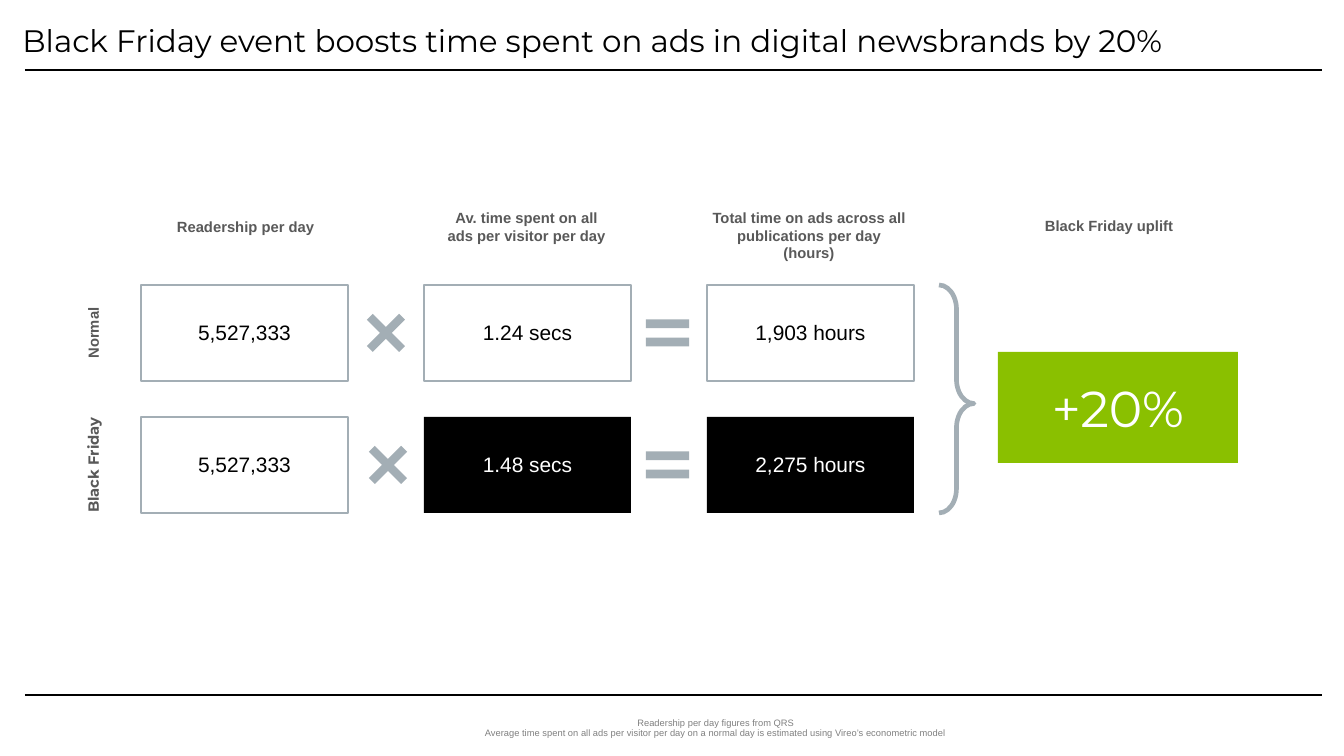
from pptx import Presentation
from pptx.dml.color import RGBColor
from pptx.enum.shapes import MSO_CONNECTOR, MSO_SHAPE
from pptx.enum.text import MSO_ANCHOR, MSO_AUTO_SIZE, PP_ALIGN
from pptx.oxml.ns import qn
from pptx.util import Emu, Pt
from lxml import etree

TOP, MIDDLE = MSO_ANCHOR.TOP, MSO_ANCHOR.MIDDLE
LEFT, CENTER = PP_ALIGN.LEFT, PP_ALIGN.CENTER
BLACK = RGBColor(0x00, 0x00, 0x00)
WHITE = RGBColor(0xFF, 0xFF, 0xFF)
STEEL = RGBColor(0xA3, 0xAE, 0xB5)
GREEN = RGBColor(0x8A, 0xC0, 0x00)
DARK_GREY = RGBColor(0x59, 0x59, 0x59)
GREY = RGBColor(0x80, 0x80, 0x80)

TITLE = "Black Friday event boosts time spent on ads in digital newsbrands by 20%"
FOOTNOTE = ("Readership per day figures from QRS\v"
            "Average time spent on all ads per visitor per day on a normal day "
            "is estimated using Vireo’s econometric model")
HEADERS = [
    ("Readership per day", (161, 211, 169, 31)),
    ("Av. time spent on all ads per visitor per day", (430, 202, 193, 50)),
    ("Total time on ads across all publications per day (hours)", (698, 202, 222, 67)),
    ("Black Friday uplift", (998, 210, 222, 31)),
]
ROWS = [
    {"label": "Normal", "font": "Arial", "times_x": 355, "highlight": (False, False, False),
     "values": ("5,527,333", "1.24 secs", "1,903 hours")},
    {"label": "Black Friday", "font": "Montserrat", "times_x": 357, "highlight": (False, True, True),
     "values": ("5,527,333", "1.48 secs", "2,275 hours")},
]
UPLIFT = "+20%"

GRID_X, GRID_Y = 141, 285
COL_STEP, ROW_STEP = 283, 132
BOX_W, BOX_H = 207, 96
LABEL_X, LABEL_W, LABEL_H = 93, 129, 31
TIMES_SIZE = 62
EQUAL_X, EQUAL_W, EQUAL_H = 638, 59, 102
RULES_Y = (70, 695)
RULE_X1, RULE_X2 = 25, 1322

HEADER_FONT = {"name": "Arial", "size": Pt(7.9), "bold": True}


def px(n):
    return Emu(round(n * 914400 / 134.4))


def write(s, text, font, color, align=CENTER, anchor=TOP, wrap=True, spacing=None, inset=None):
    tf = s.text_frame
    tf.auto_size = MSO_AUTO_SIZE.NONE
    tf.word_wrap = wrap
    tf.vertical_anchor = anchor
    if inset is not None:
        for side in ("left", "top", "right", "bottom"):
            setattr(tf, f"margin_{side}", px(inset))
    p = tf.paragraphs[0]
    p.text = text
    p.alignment = align
    p.space_before = Pt(0)
    if spacing:
        p.line_spacing = spacing
    for r in p.runs:
        for key, value in font.items():
            setattr(r.font, key, value)
        r.font.color.rgb = color


def add_text(slide, box, text, font, color, **layout):
    s = slide.shapes.add_textbox(*map(px, box))
    write(s, text, font, color, **layout)
    return s


def add_shape(slide, kind, box, fill=None, line=None, width=1, adjustments=()):
    s = slide.shapes.add_shape(kind, *map(px, box))
    s.shadow.inherit = False
    for i, value in enumerate(adjustments):
        s.adjustments[i] = value
    if fill is None:
        s.fill.background()
    else:
        s.fill.solid()
        s.fill.fore_color.rgb = fill
    if line is None:
        s.line.fill.background()
    else:
        s.line.color.rgb = line
        s.line.width = Pt(width)
    return s


def add_rule(slide, y):
    c = slide.shapes.add_connector(MSO_CONNECTOR.STRAIGHT, px(RULE_X1), px(y), px(RULE_X2), px(y))
    c.line.color.rgb = BLACK
    c.line.width = Pt(0.75)
    etree.SubElement(c._element.spPr, qn("a:effectLst"))


def add_row(slide, index, row):
    y = GRID_Y + index * ROW_STEP
    mid = y + BOX_H / 2
    label = add_text(slide, (LABEL_X - LABEL_W / 2, mid - LABEL_H / 2, LABEL_W, LABEL_H),
                     row["label"], {**HEADER_FONT, "name": row["font"]}, DARK_GREY, wrap=False)
    label.rotation = 270
    for col, (value, dark) in enumerate(zip(row["values"], row["highlight"])):
        s = add_shape(slide, MSO_SHAPE.ROUNDED_RECTANGLE, (GRID_X + col * COL_STEP, y, BOX_W, BOX_H),
                      BLACK if dark else WHITE, None if dark else STEEL, adjustments=(0,))
        write(s, value, {"name": "Arial", "size": Pt(11.2)}, WHITE if dark else BLACK,
              anchor=MIDDLE, spacing=Pt(12.8), inset=8)
    add_shape(slide, MSO_SHAPE.MATH_MULTIPLY,
              (row["times_x"], mid - TIMES_SIZE / 2, TIMES_SIZE, TIMES_SIZE),
              STEEL, adjustments=(0.135,))
    add_shape(slide, MSO_SHAPE.MATH_EQUAL, (EQUAL_X, mid - EQUAL_H / 2, EQUAL_W, EQUAL_H),
              STEEL, adjustments=(0.085, 0.094))


def main():
    prs = Presentation()
    prs.slide_width, prs.slide_height = px(1344), px(756)
    slide = prs.slides.add_slide(prs.slide_layouts[5])

    title = slide.shapes.title
    title.left, title.top, title.width, title.height = map(px, (9, 19, 1382 - 50, 52))
    write(title, TITLE, {"name": "Montserrat", "size": Pt(16.6)}, BLACK, align=LEFT, spacing=0.9)
    for y in RULES_Y:
        add_rule(slide, y)

    for text, box in HEADERS:
        add_text(slide, box, text, HEADER_FONT, DARK_GREY)
    for index, row in enumerate(ROWS):
        add_row(slide, index, row)

    add_shape(slide, MSO_SHAPE.RIGHT_BRACE, (939, GRID_Y, 35, ROW_STEP + BOX_H),
              line=STEEL, width=2.5, adjustments=(0.696, 0.52))
    uplift = add_shape(slide, MSO_SHAPE.ROUNDED_RECTANGLE, (998, 352, 240, 111),
                       GREEN, adjustments=(0,))
    write(uplift, UPLIFT, {"name": "Montserrat", "size": Pt(27)}, WHITE, anchor=MIDDLE, inset=8)
    add_text(slide, (168, 710, 1096, 38), FOOTNOTE, {"name": "Arial", "size": Pt(5)}, GREY,
             anchor=MIDDLE, spacing=0.9)

    prs.save("out.pptx")


if __name__ == "__main__":
    main()
